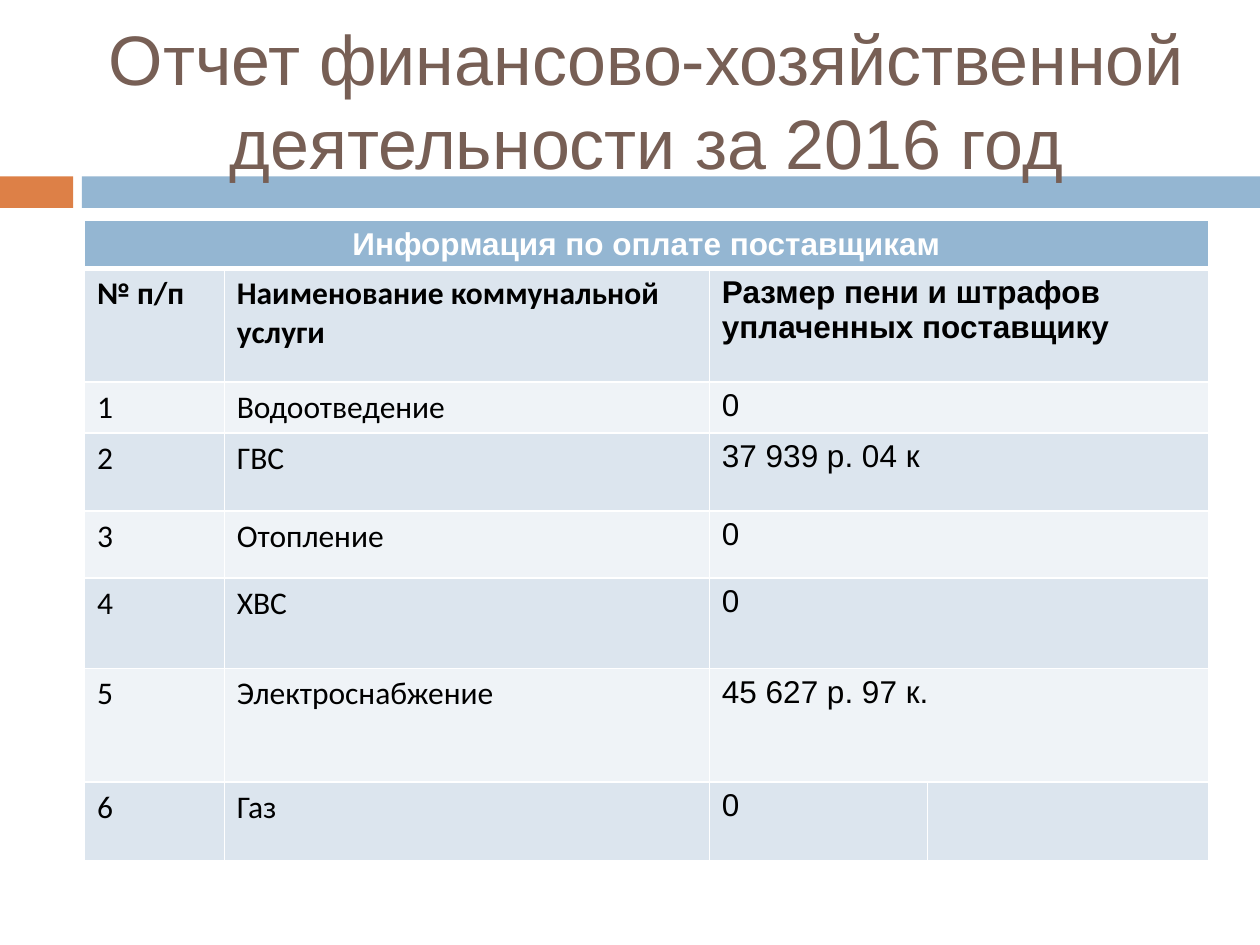
from dataclasses import dataclass
from typing import NamedTuple

from lxml.etree import SubElement
from pptx import Presentation
from pptx.dml.color import RGBColor
from pptx.enum.shapes import MSO_SHAPE
from pptx.enum.text import MSO_ANCHOR, MSO_AUTO_SIZE, PP_ALIGN
from pptx.oxml.ns import qn
from pptx.util import Inches, Pt


@dataclass(frozen=True)
class Theme:
    title: str = "775F55"
    accent: str = "DD8047"
    band: str = "94B6D2"
    dark: str = "DCE5EE"
    light: str = "EFF3F7"
    white: str = "FFFFFF"
    black: str = "000000"
    sans: str = "Arial"
    label: str = "Calibri"
    large: int = 40
    small: int = 18


class Bar(NamedTuple):
    left: float
    width: float
    color: str


class Fee(NamedTuple):
    number: str
    service: str
    amount: str
    height: float


THEME = Theme()
LEFT, WIDTH = 0.67, 8.92
BARS = [Bar(0, 0.58, THEME.accent), Bar(0.65, 9.35, THEME.band)]
COLS = [1.11, 3.85, 1.73, 2.23]
CAPTION = "Информация по оплате поставщикам"
CAPTION_HEIGHT = 0.36
FEES = [
    Fee("№ п/п", "Наименование коммунальной услуги",
        "Размер пени и штрафов уплаченных поставщику", 0.9),
    Fee("1", "Водоотведение", "0", 0.36),
    Fee("2", "ГВС", "37 939 р. 04 к", 0.62),
    Fee("3", "Отопление", "0", 0.53),
    Fee("4", "ХВС", "0", 0.72),
    Fee("5", "Электроснабжение", "45 627 р. 97 к.", 0.9),
    Fee("6", "Газ", "0", 0.63),
]


def style(font, color: str, **values) -> None:
    for name, value in values.items():
        setattr(font, name, value)
    font.color.rgb = RGBColor.from_string(color)


def draw_bar(slide, bar: Bar) -> None:
    shape = slide.shapes.add_shape(MSO_SHAPE.RECTANGLE, Inches(bar.left), Inches(1.4),
                                   Inches(bar.width), Inches(0.25))
    shape.shadow.inherit = False
    shape.fill.solid()
    shape.fill.fore_color.rgb = RGBColor.from_string(bar.color)
    shape.line.fill.background()


def paint(cell, color: str, top: float = 1, bottom: float = 1) -> None:
    """Give a cell white borders and a solid fill."""
    props = cell._tc.get_or_add_tcPr()
    for tag, width in {"lnL": 1, "lnR": 1, "lnT": top, "lnB": bottom}.items():
        line = SubElement(props, qn(f"a:{tag}"), w=str(Pt(width)))
        fill = SubElement(line, qn("a:solidFill"))
        SubElement(fill, qn("a:srgbClr"), val=THEME.white)
    cell.fill.solid()
    cell.fill.fore_color.rgb = RGBColor.from_string(color)


def write(cell, text: str, face: str, color: str, bold: bool) -> None:
    cell.text = text
    style(cell.text_frame.paragraphs[0].runs[0].font, color,
          name=face, size=Pt(THEME.small), bold=bold)


def draw_table(slide) -> None:
    heights = [CAPTION_HEIGHT] + [fee.height for fee in FEES]
    table = slide.shapes.add_table(len(heights), len(COLS), Inches(LEFT), Inches(1.75),
                                   Inches(WIDTH), Inches(sum(heights))).table
    for column, width in zip(table.columns, COLS):
        column.width = Inches(width)
    for row, height in zip(table.rows, heights):
        row.height = Inches(height)

    # Caption row across all columns
    for cell in table.rows[0].cells:
        paint(cell, THEME.band, bottom=3)
    head = table.cell(0, 0)
    head.merge(table.cell(0, len(COLS) - 1))
    write(head, CAPTION, THEME.sans, THEME.white, True)
    head.text_frame.paragraphs[0].alignment = PP_ALIGN.CENTER

    # Column names and fees; the last row keeps its amount cell split
    faces = [THEME.label, THEME.label, THEME.sans]
    for index, fee in enumerate(FEES, 1):
        first = index == 1
        for cell in table.rows[index].cells:
            paint(cell, THEME.dark if index % 2 else THEME.light, top=3 if first else 1)
        if index < len(FEES):
            table.cell(index, 2).merge(table.cell(index, 3))
        for col, (text, face) in enumerate(zip(fee[:3], faces)):
            write(table.cell(index, col), text, face, THEME.black, first)


def draw_title(slide) -> None:
    title = slide.shapes.title
    place = {"left": LEFT, "top": 0.25, "width": WIDTH, "height": 1.08}
    for name, value in place.items():
        setattr(title, name, Inches(value))
    frame = title.text_frame
    frame.text = "Отчет финансово-хозяйственной деятельности за 2016 год"
    options = {"word_wrap": True, "auto_size": MSO_AUTO_SIZE.NONE,
               "vertical_anchor": MSO_ANCHOR.MIDDLE}
    for name, value in options.items():
        setattr(frame, name, value)
    line = frame.paragraphs[0]
    line.alignment = PP_ALIGN.CENTER
    style(line.runs[0].font, THEME.title, name=THEME.sans, size=Pt(THEME.large))


def main() -> None:
    deck = Presentation()
    deck.slide_width, deck.slide_height = Inches(10), Inches(7.5)
    slide = deck.slides.add_slide(deck.slide_layouts[5])
    for bar in BARS:
        draw_bar(slide, bar)
    draw_table(slide)
    draw_title(slide)
    # Title text overlaps the band, so it goes to the front
    slide.shapes._spTree.append(slide.shapes.title._element)
    deck.save("out.pptx")


if __name__ == "__main__":
    main()
